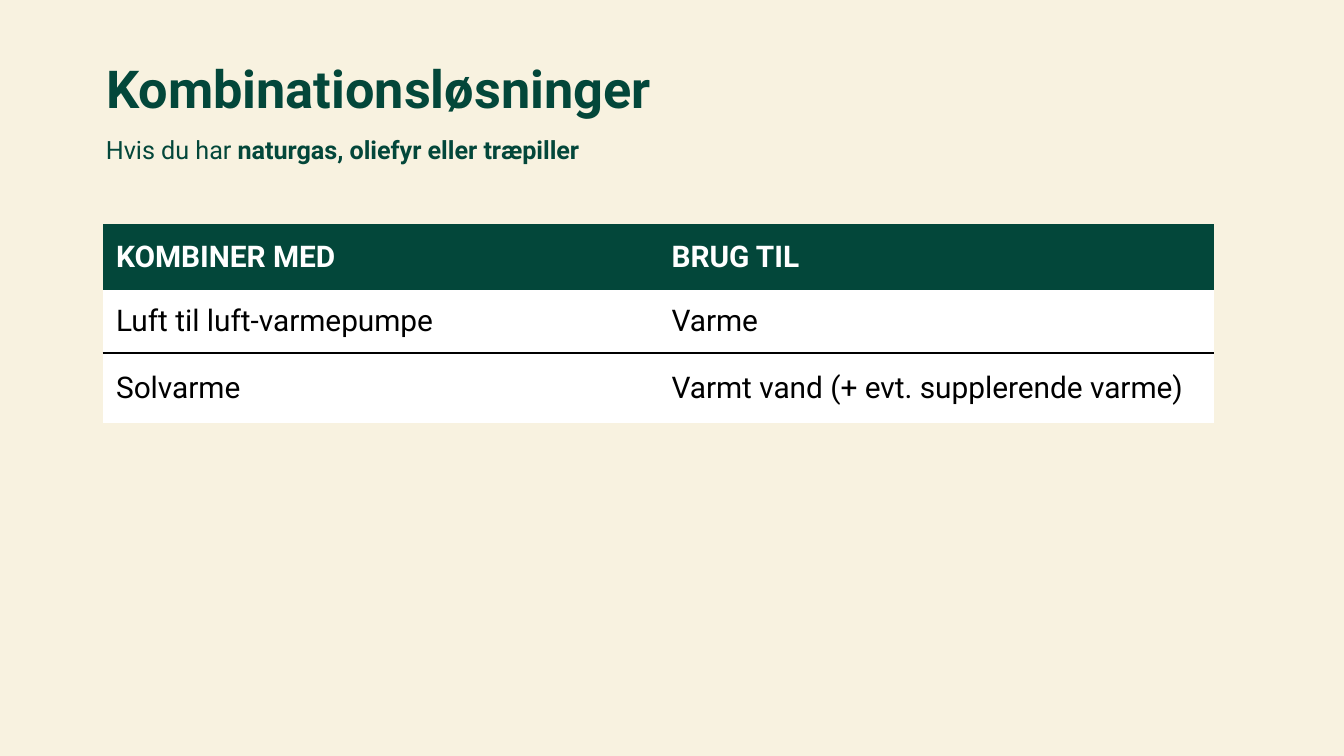
from lxml import etree
from pptx import Presentation
from pptx.dml.color import RGBColor
from pptx.enum.text import MSO_ANCHOR as Anchor, MSO_AUTO_SIZE as AutoSize, PP_ALIGN as Align
from pptx.oxml import parse_xml
from pptx.oxml.ns import nsdecls, qn
from pptx.util import Pt

CREAM = RGBColor(0xF8, 0xF2, 0xE0)
GREEN = RGBColor(0x03, 0x47, 0x3A)
WHITE = RGBColor(0xFF, 0xFF, 0xFF)
BLACK = RGBColor(0x00, 0x00, 0x00)
NO_GRID_STYLE = "{2D5ABB26-0587-4C30-8999-92F81FD0307C}"


def write(paragraph, text, size, color, bold):
    run = paragraph.add_run()
    run.text = text
    for name, value in {"name": "Roboto", "size": Pt(size), "bold": bold}.items():
        setattr(run.font, name, value)
    run.font.color.rgb = color


def add_rule(cell, side):
    line = parse_xml(f'<a:{side} {nsdecls("a")} w="{Pt(1)}"/>')
    fill = etree.SubElement(line, qn("a:solidFill"))
    etree.SubElement(fill, qn("a:srgbClr"), val=str(BLACK))
    cell._tc.get_or_add_tcPr().append(line)


deck = Presentation()
deck.slide_width, deck.slide_height = Pt(720), Pt(405)
slide = deck.slides.add_slide(deck.slide_layouts[5])
slide.background.fill.solid()
slide.background.fill.fore_color.rgb = CREAM

heading = slide.shapes.title
heading.left, heading.top, heading.width, heading.height = Pt(49.7), Pt(30.2), Pt(546.5), Pt(67.7)
condition = slide.shapes.add_textbox(Pt(49.7), Pt(58.3), Pt(620.6), Pt(33.8))

for box, anchor, size, runs in [
    (heading, Anchor.TOP, 28, [("Kombinationsløsninger", True)]),
    (condition, Anchor.BOTTOM, 13.5,
     [("Hvis du har ", False), ("naturgas, oliefyr eller træpiller", True)]),
]:
    frame = box.text_frame
    frame_format = {"word_wrap": True, "auto_size": AutoSize.NONE, "vertical_anchor": anchor}
    for name, value in frame_format.items():
        setattr(frame, name, value)
    paragraph = frame.paragraphs[0]
    paragraph.alignment = Align.LEFT
    paragraph.line_spacing = 0.9
    for text, bold in runs:
        write(paragraph, text, size, GREEN, bold)

combinations = [
    ("KOMBINER MED", "BRUG TIL"),
    ("Luft til luft-varmepumpe", "Varme"),
    ("Solvarme", "Varmt vand (+ evt. supplerende varme)"),
]
row_heights = [35.3, 33.8, 37.4]
row_rules = [None, "lnB", "lnT"]

table = slide.shapes.add_table(
    len(combinations), 2, Pt(55), Pt(120), Pt(595.2), Pt(sum(row_heights))
).table
table.first_row = True
table.horz_banding = False
table._tbl.tblPr.find(qn("a:tableStyleId")).text = NO_GRID_STYLE

for r, (texts, height, rule) in enumerate(zip(combinations, row_heights, row_rules)):
    table.rows[r].height = Pt(height)
    is_header = r == 0
    for c, text in enumerate(texts):
        cell = table.cell(r, c)
        cell.vertical_anchor = Anchor.MIDDLE
        if rule:
            add_rule(cell, rule)
        cell.fill.solid()
        cell.fill.fore_color.rgb = GREEN if is_header else WHITE
        write(cell.text_frame.paragraphs[0], text, 16, WHITE if is_header else BLACK, is_header)

deck.save("out.pptx")
